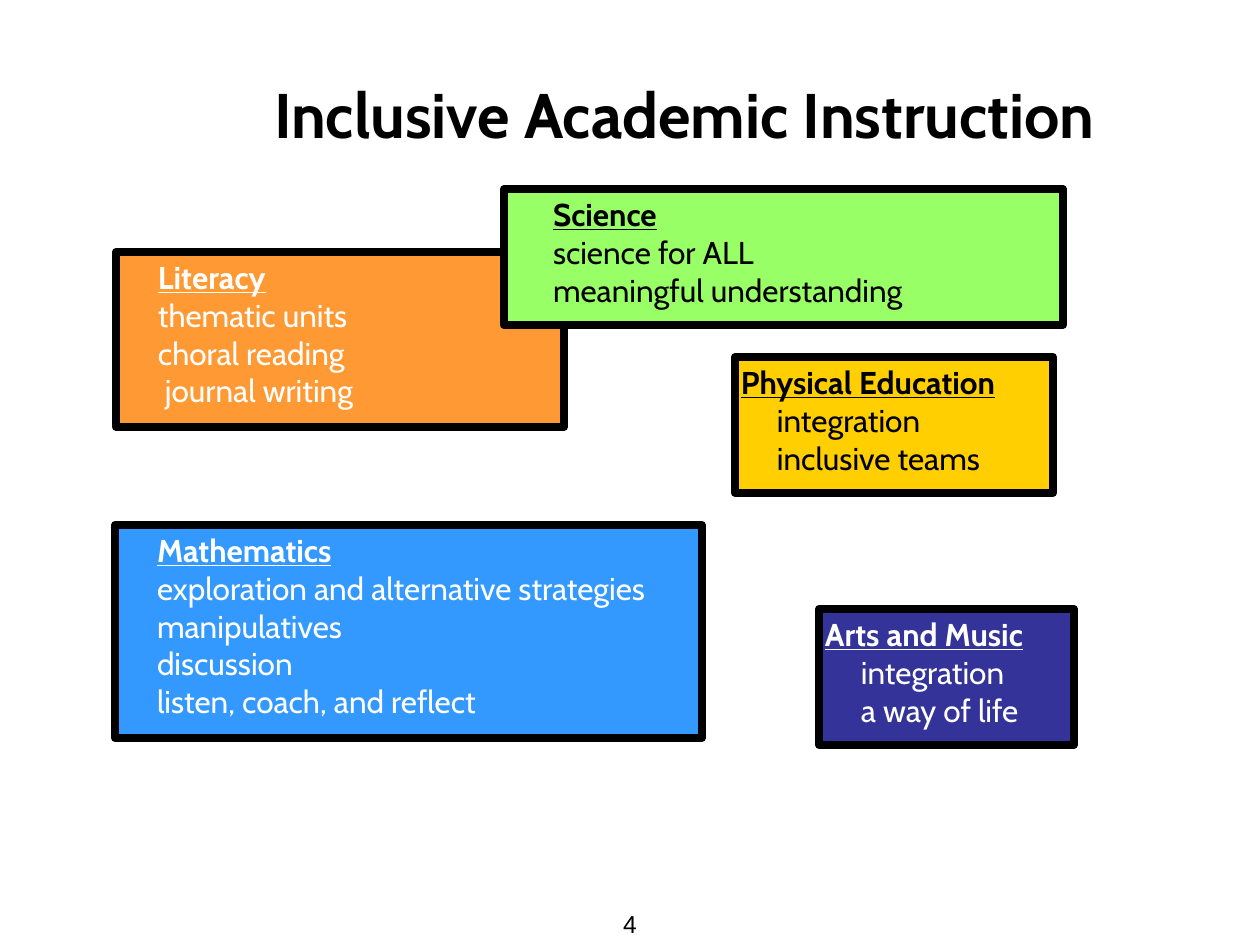
from pptx import Presentation
from pptx.dml.color import RGBColor
from pptx.enum.shapes import MSO_SHAPE
from pptx.enum.text import MSO_ANCHOR, PP_ALIGN
from pptx.util import Emu, Pt

RECT = MSO_SHAPE.RECTANGLE
TOP, BOTTOM = MSO_ANCHOR.TOP, MSO_ANCHOR.BOTTOM
LEFT, CENTER = PP_ALIGN.LEFT, PP_ALIGN.CENTER

BLACK = RGBColor(0x00, 0x00, 0x00)
WHITE = RGBColor(0xFF, 0xFF, 0xFF)
ORANGE = RGBColor(0xFF, 0x99, 0x33)
BLUE = RGBColor(0x33, 0x99, 0xFF)
INDIGO = RGBColor(0x33, 0x33, 0x99)
GREEN = RGBColor(0x99, 0xFF, 0x66)
YELLOW = RGBColor(0xFF, 0xCF, 0x01)


def px(n):
    return Emu(round(n * 914400 / 126))


def write(sp, lines, size=18, font="Cabin", color=BLACK, align=LEFT,
          anchor=TOP, bold_first=True, underline_first=False):
    """Fill a shape with (text, indent in px) lines; the first is the heading."""
    tf = sp.text_frame
    tf.word_wrap = True
    tf.vertical_anchor = anchor
    tf.margin_left = tf.margin_right = tf.margin_top = tf.margin_bottom = px(6)
    for i, (text, indent) in enumerate(lines):
        p = tf.paragraphs[0] if i == 0 else tf.add_paragraph()
        p.alignment = align
        if indent:
            p._p.get_or_add_pPr().set("marL", str(px(indent)))
        r = p.add_run()
        r.text = text
        r.font.name, r.font.size = font, Pt(size)
        r.font.color.rgb = color
        r.font.bold = bold_first and i == 0
        r.font.underline = underline_first and i == 0


prs = Presentation()
prs.slide_width, prs.slide_height = px(1260), px(945)
s = prs.slides.add_slide(prs.slide_layouts[6])

# Page number
sp = s.shapes.add_textbox(px(616), px(901), px(28), px(43))
write(sp, [("4", 0)], size=14, font="Arial", align=CENTER, anchor=BOTTOM,
      bold_first=False)

# Title
sp = s.shapes.add_textbox(px(154), px(69), px(1061), px(88))
write(sp, [("Inclusive Academic Instruction", 0)], size=36, align=CENTER,
      anchor=BOTTOM)

# Subject boxes, back to front: position, fill, text colour, indented lines
subjects = [
    ((116, 252, 448, 175), ORANGE, WHITE,
     [("Literacy", 36), ("thematic units", 36), ("choral reading", 36),
      ("journal writing", 43)]),
    ((115, 525, 587, 213), BLUE, WHITE,
     [("Mathematics", 36), ("exploration and alternative strategies", 36),
      ("manipulatives", 36), ("discussion", 36),
      ("listen, coach, and reflect", 36)]),
    ((819, 609, 255, 136), INDIGO, WHITE,
     [("Arts and Music", 0), ("integration", 36), ("a way of life", 36)]),
    ((504, 189, 559, 136), GREEN, BLACK,
     [("Science", 43), ("science for ALL", 43),
      ("meaningful understanding", 43)]),
    ((735, 357, 318, 136), YELLOW, BLACK,
     [("Physical Education", 0), ("integration", 36), ("inclusive teams", 36)]),
]
for box, fill, color, lines in subjects:
    sp = s.shapes.add_shape(RECT, *map(px, box))
    sp.shadow.inherit = False
    sp.fill.solid()
    sp.fill.fore_color.rgb = fill
    sp.line.color.rgb = BLACK
    sp.line.width = Pt(4.5)
    write(sp, lines, color=color, underline_first=True)

prs.save("out.pptx")
